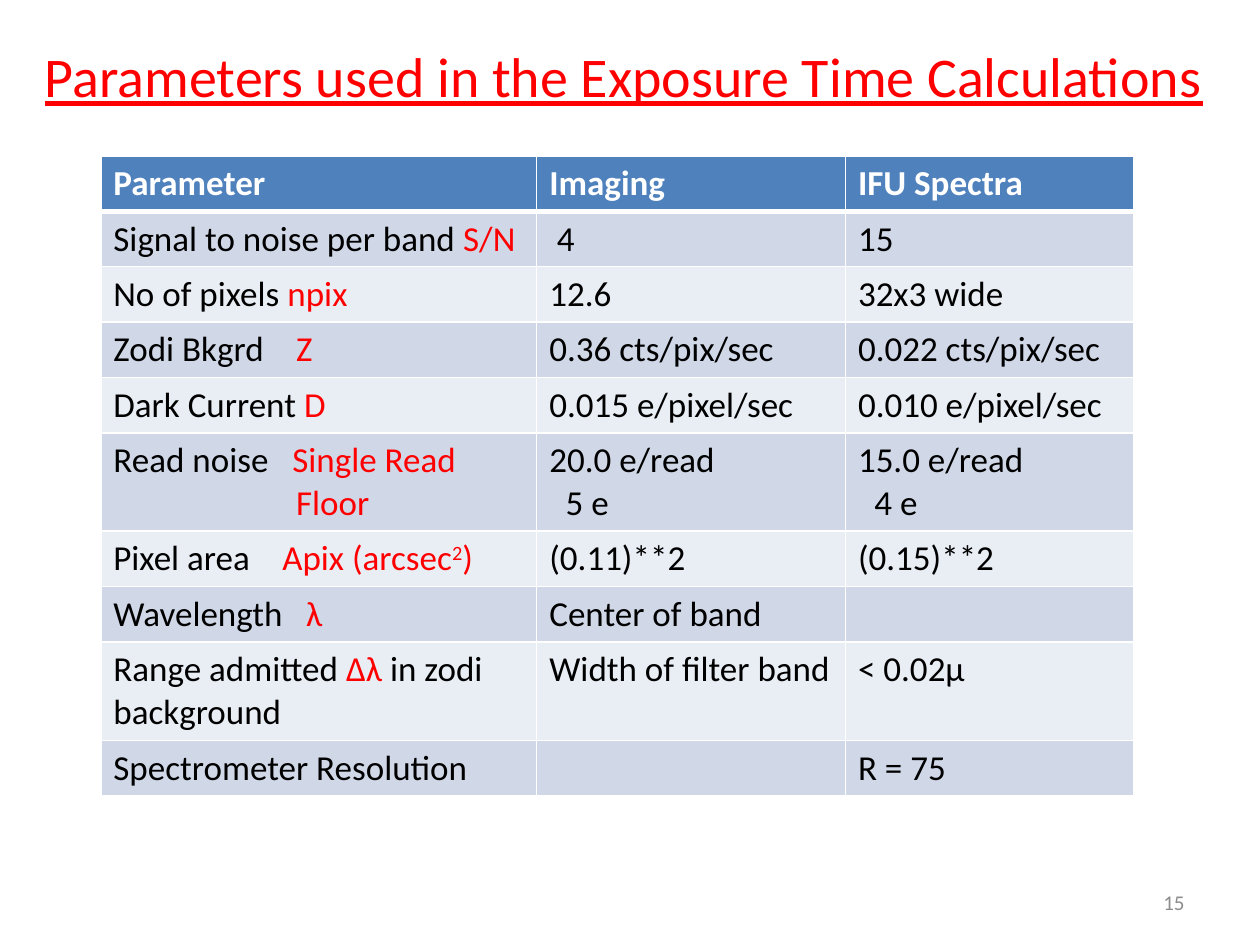
from lxml import etree
from pptx import Presentation
from pptx import util as u
from pptx.dml.color import RGBColor
from pptx.enum import text
from pptx.oxml import ns

RED = RGBColor(0xFF, 0, 0)
BLACK = RGBColor(0, 0, 0)
WHITE = RGBColor(0xFF, 0xFF, 0xFF)
GREY = RGBColor(0x8C, 0x8C, 0x8C)
HEAD = RGBColor(0x4F, 0x81, 0xBD)
BANDS = RGBColor(0xE9, 0xED, 0xF4), RGBColor(0xD0, 0xD8, 0xE8)

FONT = "Calibri"
WIDE, HIGH = u.Inches(10), u.Inches(7.5)
COLS = 3.46, 2.45, 2.29      # column widths in inches
LINE, PAD = 0.34, 0.1        # row height: lines of text plus padding

# Each cell lists its lines; "|" switches between black and red, "^" raises
# the next part. A line may be a pair: text and indent.
ROWS = [
    (["Parameter"], ["Imaging"], ["IFU Spectra"]),
    (["Signal to noise per band |S/N"], [("4", 0.06)], ["15"]),
    (["No of pixels |npix"], ["12.6"], ["32x3 wide"]),
    (["Zodi Bkgrd\t|Z"], ["0.36 cts/pix/sec"], ["0.022 cts/pix/sec"]),
    (["Dark Current |D"], ["0.015 e/pixel/sec"], ["0.010 e/pixel/sec"]),
    (["Read noise\t|Single Read", ("|Floor", 1.45)],
     ["20.0 e/read", ("5 e", 0.13)], ["15.0 e/read", ("4 e", 0.13)]),
    (["Pixel area\t|Apix (arcsec^2^)"], ["(0.11)**2"], ["(0.15)**2"]),
    (["Wavelength\t|λ"], ["Center of band"], []),
    (["Range admitted |Δλ |in zodi background"],
     ["Width of filter band"], ["< 0.02μ"]),
    (["Spectrometer Resolution"], [], ["R = 75"]),
]
TABS = {3: 1.45, 5: 1.42, 6: 1.34, 7: 1.53}   # tab stop by row
TALL = {5: 2, 8: 2}                           # rows of two lines


def style(run, size, color, bold=False):
    font = run.font
    font.name, font.size, font.bold = FONT, u.Pt(size), bold
    font.color.rgb = color


def label(slide, box, words, size, color, align):
    """One line of text, centred vertically in its box."""
    frame = slide.shapes.add_textbox(*box).text_frame
    frame.word_wrap = True
    frame.vertical_anchor = text.MSO_ANCHOR.MIDDLE
    frame.text = words
    para = frame.paragraphs[0]
    para.alignment = align
    style(para.runs[0], size, color)
    return para.runs[0]


def border(cell, base):
    """White lines on all four sides, set before the fill."""
    props = cell._tc.get_or_add_tcPr()
    for at, side in enumerate("LRTB"):
        line = etree.Element(ns.qn(f"a:ln{side}"))
        line.set("w", str(u.Pt(base if side == "B" else 1)))
        fill = etree.SubElement(line, ns.qn("a:solidFill"))
        etree.SubElement(fill, ns.qn("a:srgbClr")).set("val", str(WHITE))
        props.insert(at, line)


def write(para, words, ink, bold, indent, tab):
    """Fill a paragraph with black, red and raised runs."""
    props = para._p.get_or_add_pPr()
    if indent:
        props.set("marL", str(u.Inches(indent)))
    if "\t" in words:
        tabs = etree.SubElement(props, ns.qn("a:tabLst"))
        stop = etree.SubElement(tabs, ns.qn("a:tab"))
        stop.set("pos", str(u.Inches(tab)))
        stop.set("algn", "l")
    for turn, part in enumerate(words.split("|")):
        for lift, bit in enumerate(part.split("^")):
            if bit:
                run = para.add_run()
                run.text = bit
                style(run, 20, RED if turn % 2 else ink, bold)
                if lift % 2:
                    run.font._element.set("baseline", "30000")


def fill(cell, lines, row):
    head = row == 0
    cell.fill.solid()
    cell.fill.fore_color.rgb = HEAD if head else BANDS[row % 2]
    border(cell, 3 if head else 1)
    frame = cell.text_frame
    for at, line in enumerate(lines):
        words, indent = line if isinstance(line, tuple) else (line, 0)
        para = frame.add_paragraph() if at else frame.paragraphs[0]
        write(para, words, WHITE if head else BLACK, head, indent,
              TABS.get(row))


def grid(slide, left, top):
    """The table of parameters."""
    highs = [LINE * TALL.get(row, 1) + PAD for row in range(len(ROWS))]
    table = slide.shapes.add_table(
        len(ROWS), len(COLS), left, top,
        u.Inches(sum(COLS)), u.Inches(sum(highs))).table
    for col, wide in zip(table.columns, COLS):
        col.width = u.Inches(wide)
    for row, (high, cells) in enumerate(zip(highs, ROWS)):
        table.rows[row].height = u.Inches(high)
        for col, lines in enumerate(cells):
            fill(table.cell(row, col), lines, row)


def main():
    deck = Presentation()
    deck.slide_width, deck.slide_height = WIDE, HIGH
    slide = deck.slides.add_slide(deck.slide_layouts[6])

    # Title
    box = int(WIDE * 0.02), 0, int(WIDE * 0.95), int(HIGH * 0.16)
    title = label(slide, box, "Parameters used in the Exposure Time Calculations",
                  32, RED, text.PP_ALIGN.CENTER)
    title.font.underline = True

    # Parameters
    grid(slide, int(WIDE * 0.08), int(HIGH * 0.165))

    # Page number
    box = int(WIDE * 0.72), int(HIGH * 0.93), int(WIDE * 0.23), int(HIGH * 0.05)
    label(slide, box, "15", 12, GREY, text.PP_ALIGN.RIGHT)

    deck.save("out.pptx")


if __name__ == "__main__":
    main()
